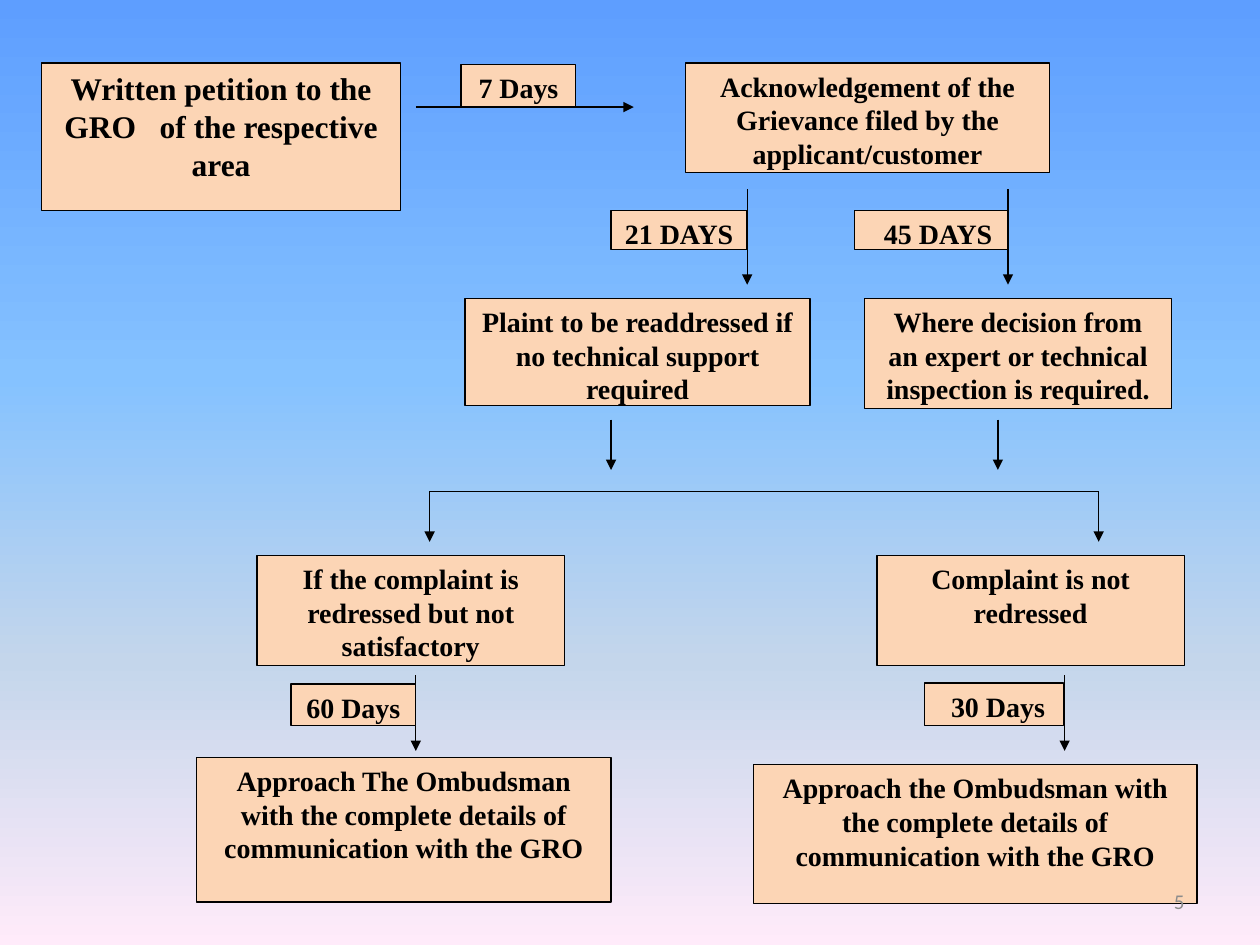
"""Build the grievance redressal flowchart slide."""
from lxml import etree
from pptx import Presentation
from pptx.dml.color import RGBColor
from pptx.enum.shapes import MSO_CONNECTOR, MSO_SHAPE
from pptx.enum.text import MSO_ANCHOR, PP_ALIGN
from pptx.oxml.ns import qn
from pptx.util import Inches, Pt

RECTANGLE = MSO_SHAPE.RECTANGLE
STRAIGHT = MSO_CONNECTOR.STRAIGHT
TOP, MIDDLE = MSO_ANCHOR.TOP, MSO_ANCHOR.MIDDLE
CENTER, RIGHT = PP_ALIGN.CENTER, PP_ALIGN.RIGHT

COLORS = {"box": "FCD5B5", "ink": "000000", "number": "8C8C8C"}
BACKGROUND = [(0, "5E9EFF"), (40, "85C2FF"), (70, "C4D6EB"), (100, "FFEBFA")]
BOX_FONT, NUMBER_FONT = "Times New Roman", "Calibri"
LINE_WIDTH = 0.75
INSET = 0.1

PETITION = ("Written petition to the GRO   of the respective area", 0.33, 0.5, 2.85, 1.17)
STEPS = [
    ("Where decision from an expert or technical inspection is required.", 6.86, 2.37, 2.44, 0.87),
    ("Plaint to be readdressed if no technical support required", 3.69, 2.37, 2.74, 0.85),
    ("Acknowledgement of the Grievance filed by the applicant/customer", 5.44, 0.5, 2.89, 0.87),
    ("Complaint is not redressed", 6.96, 4.41, 2.44, 0.87),
    ("If the complaint is redressed but not satisfactory", 2.04, 4.41, 2.44, 0.87),
    ("Approach The Ombudsman with the complete details of communication with the GRO",
     1.56, 6.01, 3.29, 1.15),
    ("Approach the Ombudsman with the complete details of communication with the GRO",
     5.98, 6.07, 3.52, 1.1),
]
DEADLINES = [
    ("21 DAYS", 4.85, 1.67, 1.08, 0.31, 0),
    ("45 DAYS", 6.78, 1.67, 1.22, 0.31, 0.11),
    ("7 Days", 3.66, 0.51, 0.91, 0.34, 0),
    ("30 Days", 7.34, 5.42, 1.1, 0.34, 0.06),
    ("60 Days", 2.31, 5.43, 0.99, 0.33, 0),
]
DOWN_ARROWS = [
    (1.5, 2.26, (5.93, 8)),
    (3.33, 3.73, (4.85, 7.92)),
    (3.9, 4.3, (3.41, 8.72)),
    (5.36, 5.96, (3.3, 8.45)),
]
SLIDE_NUMBER = ("5", 7.17, 6.95, 2.33, 0.4)


def paint_background(slide):
    fill = slide.background.fill
    fill.gradient()
    fill.gradient_angle = 270
    stops = next(slide._element.iter(qn("a:gsLst")))
    for stop in list(stops):
        stops.remove(stop)
    for position, color in BACKGROUND:
        stop = etree.SubElement(stops, qn("a:gs"), pos=str(position * 1000))
        etree.SubElement(stop, qn("a:srgbClr"), val=color)


def write(shape, text, size, font, color, alignment, anchor, bold=False):
    frame = shape.text_frame
    frame.word_wrap = True
    frame.vertical_anchor = anchor
    paragraph = frame.paragraphs[0]
    paragraph.alignment = alignment
    run = paragraph.add_run()
    run.text = text
    run.font.name = font
    run.font.size = Pt(size)
    run.font.bold = bold
    run.font.color.rgb = RGBColor.from_string(COLORS[color])
    return paragraph


def add_box(slide, text, left, top, width, height, indent=0, size=16, before=0, after=10):
    shape = slide.shapes.add_shape(RECTANGLE, *map(Inches, (left, top, width, height)))
    shape.shadow.inherit = False
    shape.fill.solid()
    shape.fill.fore_color.rgb = RGBColor.from_string(COLORS["box"])
    shape.line.color.rgb = RGBColor.from_string(COLORS["ink"])
    shape.line.width = Pt(LINE_WIDTH)
    shape.text_frame.margin_left = Inches(INSET + indent)
    paragraph = write(shape, text, size, BOX_FONT, "ink", CENTER, TOP, bold=True)
    paragraph.space_before = Pt(before)
    paragraph.space_after = Pt(after)


def add_line(slide, start, end, arrow=True):
    connector = slide.shapes.add_connector(STRAIGHT, *map(Inches, start + end))
    connector.line.color.rgb = RGBColor.from_string(COLORS["ink"])
    connector.line.width = Pt(LINE_WIDTH)
    if arrow:
        etree.SubElement(connector.line._get_or_add_ln(), qn("a:tailEnd"), type="triangle")
    etree.SubElement(connector._element.spPr, qn("a:effectLst"))


def main():
    presentation = Presentation()
    presentation.slide_width, presentation.slide_height = Inches(10), Inches(7.5)
    slide = presentation.slides.add_slide(presentation.slide_layouts[6])
    paint_background(slide)

    add_box(slide, *PETITION, size=18, before=5, after=5)
    for step in STEPS:
        add_box(slide, *step)

    add_line(slide, (3.3, 0.85), (5.03, 0.85))
    add_line(slide, (3.41, 3.9), (8.72, 3.9), arrow=False)
    for top, bottom, columns in DOWN_ARROWS:
        for x in columns:
            add_line(slide, (x, top), (x, bottom))

    for deadline in DEADLINES:
        add_box(slide, *deadline)

    number, *place = SLIDE_NUMBER
    number_box = slide.shapes.add_textbox(*map(Inches, place))
    write(number_box, number, 12, NUMBER_FONT, "number", RIGHT, MIDDLE)
    presentation.save("out.pptx")


if __name__ == "__main__":
    main()
